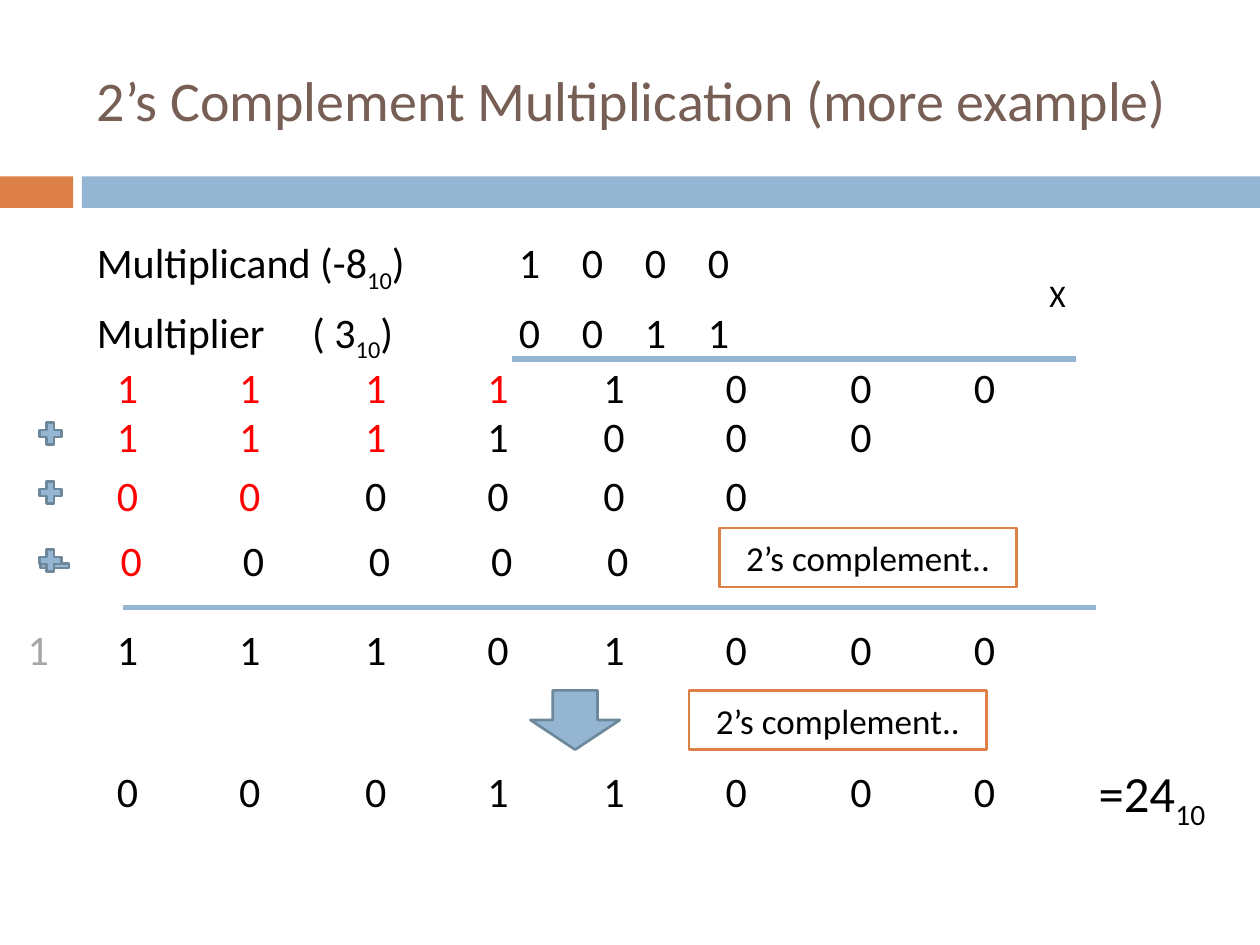
from pptx import Presentation, util as u
from pptx.dml.color import RGBColor
from pptx.enum import shapes, text
from pptx.oxml.ns import qn

W, H = 10, 7.5
FONT = "Calibri"
BLACK, RED, GREY, WHITE = "000000", "FF0000", "A6A6A6", "FFFFFF"
BLUE, STEEL, ORANGE, BROWN = "94B6D2", "6D879B", "DD8047", "775F55"
COLS = [0.83, 1.8, 2.8, 3.77, 4.69, 5.66, 6.65, 7.63]
CELL_W, CELL_H = 0.39, 0.5
SHAPE = shapes.MSO_SHAPE


def rgb(value):
    """Turn a hex string into a colour."""
    return RGBColor.from_string(value)


def inches(box):
    """Turn a box of numbers into lengths."""
    return [u.Inches(v) for v in box]


def add_runs(p, runs, size, color):
    """Add runs to a paragraph; a run given as a one-item tuple is a subscript."""
    for run in runs:
        r = p.add_run()
        r.text = run[0] if isinstance(run, tuple) else run
        for name, value in {"name": FONT, "size": u.Pt(size)}.items():
            setattr(r.font, name, value)
        r.font.color.rgb = rgb(color)
        if isinstance(run, tuple):
            r.font._element.set("baseline", "-25000")


def add_label(s, box, runs, size, color=BLACK, wrap=False, **frame):
    """Add a text box that grows with its text unless it wraps."""
    tf = s.shapes.add_textbox(*inches(box)).text_frame
    fit = text.MSO_AUTO_SIZE
    values = {"word_wrap": wrap,
              "auto_size": fit.NONE if wrap else fit.SHAPE_TO_FIT_TEXT, **frame}
    for name, value in values.items():
        setattr(tf, name, value)
    add_runs(tf.paragraphs[0], runs, size, color)
    return tf


def add_block(s, kind, box, fill, line=None):
    """Add a flat preset shape, outlined if a line colour is given."""
    sp = s.shapes.add_shape(kind, *inches(box))
    sp.shadow.inherit = False
    sp.fill.solid()
    sp.fill.fore_color.rgb = rgb(fill)
    if line:
        sp.line.color.rgb = rgb(line)
        sp.line.width = u.Pt(1.5)
    else:
        sp.line.fill.background()
    return sp


def add_rule(s, left, right, y):
    """Draw a horizontal sum line."""
    c = s.shapes.add_connector(shapes.MSO_CONNECTOR.STRAIGHT,
                               *inches((left, y, right, y)))
    c.line.color.rgb = rgb(BLUE)
    c.line.width = u.Pt(3)
    sppr = c._element.spPr
    sppr.append(sppr.makeelement(qn("a:effectLst"), {}))


def add_digits(s, top, digits, signs=0, shift=0):
    """Write one row of digits on the columns, the leading sign bits in red."""
    for i, (left, digit) in enumerate(zip(COLS, digits)):
        add_label(s, (left + shift, top, CELL_W, CELL_H), [digit], 24,
                  RED if i < signs else BLACK)


def add_callout(s, left, top):
    """Add an outlined note about taking the complement."""
    sp = add_block(s, SHAPE.FLOWCHART_PROCESS, (left, top, 2.36, 0.47), WHITE, ORANGE)
    tf = sp.text_frame
    tf.vertical_anchor = text.MSO_ANCHOR.MIDDLE
    p = tf.paragraphs[0]
    p.alignment = text.PP_ALIGN.CENTER
    add_runs(p, ["2’s complement.."], 20, BLACK)


def add_header(s, left, top, width, height):
    """Place the title above a two-colour band."""
    band, stub, gap = 0.25, 0.58, 0.07
    y = top + height - band
    add_block(s, SHAPE.RECTANGLE, (left, y, stub, band), ORANGE)
    add_block(s, SHAPE.RECTANGLE,
              (left + stub + gap, y, width - stub - gap, band), BLUE)
    add_label(s, (left + 0.67, top + 0.25, 8.92, 1.08),
              ["2’s Complement Multiplication (more example)"], 32, BROWN, True,
              vertical_anchor=text.MSO_ANCHOR.MIDDLE)


def add_operands(s, left, top, width, height):
    """Place the multiplicand and the multiplier with tabbed digits."""
    rows = [["Multiplicand (-8", ("10",), ")\t\t1\t0\t0\t0"],
            ["Multiplier     ( 3", ("10",), ")\t\t0\t0\t1\t1"]]
    tf = add_label(s, (left, top, width, height), rows[0], 24, wrap=True)
    add_runs(tf.add_paragraph(), rows[1], 24, BLACK)
    indent = u.Inches(0.35)
    for p in tf.paragraphs:
        p.space_before = u.Pt(7)
        ppr = p._p.get_or_add_pPr()
        ppr.set("marL", str(indent))
        ppr.set("indent", str(-indent))
    add_label(s, (8.23, top + 0.31, 0.34, 0.4), ["X"], 18)
    add_rule(s, 4.06, 8.54, top + height)


def add_partials(s, left, top, width, height):
    """Place the sign-extended partial products and their operators."""
    rows = [(0, "11111000", 4, 0), (0.39, "1111000", 3, 0),
            (0.86, "000000", 2, 0), (1.37, "00000", 1, 0.03)]
    for offset, digits, signs, shift in rows:
        add_digits(s, top + offset, digits, signs, shift)
    add_block(s, SHAPE.MATH_MINUS, (left, top + 1.59, 0.31, 0.16), BLUE, STEEL)
    for offset in (0.5, 0.97, 1.51):
        add_block(s, SHAPE.MATH_PLUS, (left, top + offset, 0.24, 0.24), BLUE, STEEL)
    add_callout(s, 5.71, top + 1.37)
    add_rule(s, 0.98, left + width, top + height)


def add_result(s, left, top):
    """Place the sum, its complement and the decimal answer."""
    add_label(s, (left, top, CELL_W, CELL_H), ["1"], 24, GREY)
    add_digits(s, top, "11101000")
    add_block(s, SHAPE.DOWN_ARROW, (4.21, top + 0.58, 0.71, 0.47), BLUE, STEEL)
    add_callout(s, 5.47, top + 0.58)
    add_digits(s, top + 1.13, "00011000")
    add_label(s, (8.62, top + 1.1, 1.22, 0.59), ["=24", ("10",)], 29)


def main():
    """Build the slide and save it."""
    prs = Presentation()
    prs.slide_width, prs.slide_height = inches((W, H))
    s = prs.slides.add_slide(prs.slide_layouts[6])
    add_header(s, 0, 0, W, H * 0.22)
    add_operands(s, 0.67, 1.83, 8.92, 1.02)
    add_partials(s, 0.28, 2.82, 8.42, 2)
    add_result(s, 0.12, 4.9)
    prs.save("out.pptx")


if __name__ == "__main__":
    main()
